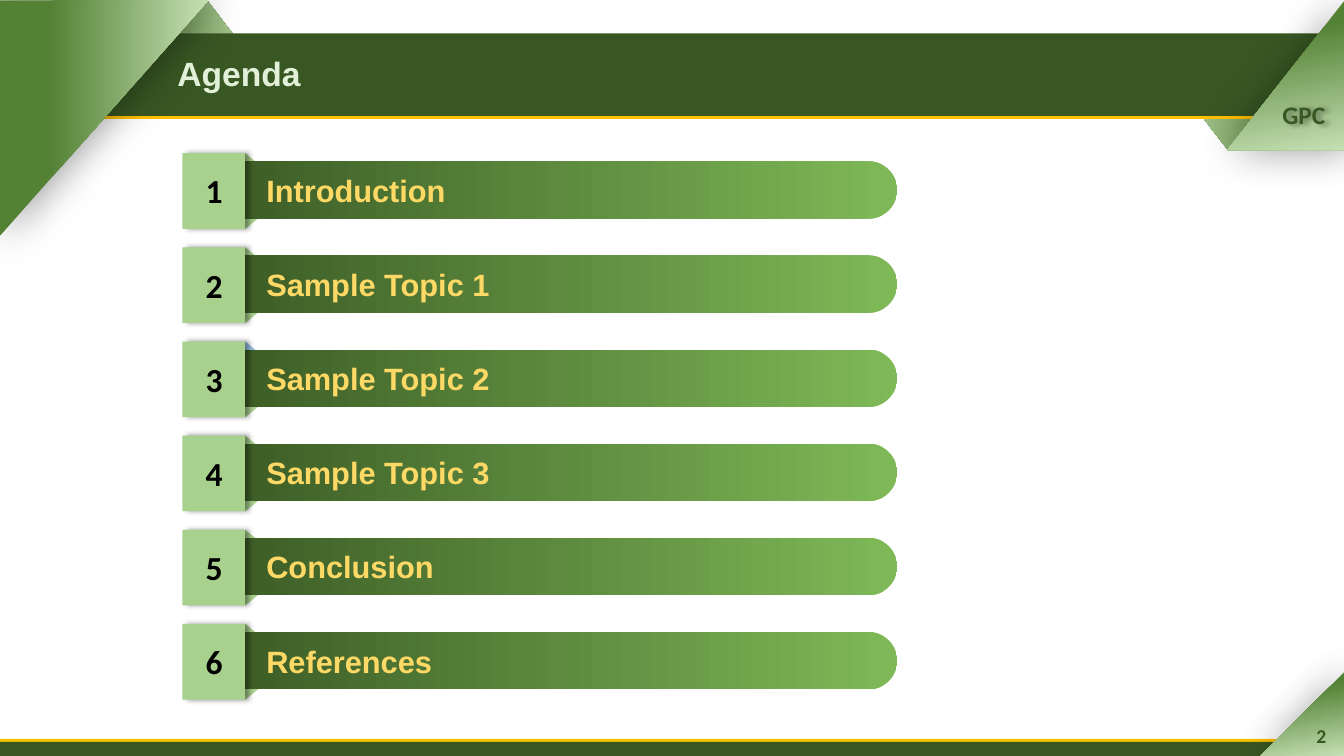
"""Build the Agenda slide with a green ribbon frame and six numbered topics."""
from lxml import etree
from pptx import Presentation
from pptx.dml.color import RGBColor
from pptx.enum.shapes import MSO_SHAPE
from pptx.enum.text import MSO_ANCHOR, MSO_AUTO_SIZE, PP_ALIGN
from pptx.oxml.ns import qn
from pptx.util import Inches, Pt

RECTANGLE = MSO_SHAPE.RECTANGLE
TRIANGLE = MSO_SHAPE.ISOSCELES_TRIANGLE
ROUNDED = MSO_SHAPE.ROUNDED_RECTANGLE
LEFT, CENTER = PP_ALIGN.LEFT, PP_ALIGN.CENTER
MIDDLE = MSO_ANCHOR.MIDDLE
NO_FIT = MSO_AUTO_SIZE.NONE

COLORS = {
    "dark": "385723", "green": "548235", "pale": "C5E0B4", "gold": "FFC000",
    "bar": "7FB957", "tile": "A9D18E", "blue": "9DC3E6", "topic": "FFD966",
    "title": "E2F0D9", "black": "000000",
}

TITLE = "Agenda"
BADGE = "GPC"
PAGE_NUMBER = "2"
TOPICS = ["Introduction", "Sample Topic 1", "Sample Topic 2",
          "Sample Topic 3", "Conclusion", "References"]
UPPER_FOLDS = {"Sample Topic 2": "blue"}

FOLD = {"fill": ("green", "pale", 0, 180), "flip": True}
CORNER = {"fill": ("green", "pale", 0.24, 170), "rotation": 270,
          "adjust": 0, "shadow": (30, 0)}
FRAME = [
    (RECTANGLE, (0, 7.33, 13, 0.14), {"fill": "gold"}),
    (RECTANGLE, (0, 7.36, 13.33, 0.14), {"fill": "dark"}),
    (TRIANGLE, (11.37, 0.44, 1.62, 1.05), {**FOLD, "adjust": 0.5}),
    (RECTANGLE, (0.32, 0.36, 12.85, 0.82), {"fill": "gold"}),
    (TRIANGLE, (1.21, 0, 1.62, 1.02), {**FOLD, "adjust": 0.48, "rotation": 180}),
    (RECTANGLE, (0.32, 0.33, 12.88, 0.82), {"fill": "dark"}),
    (TRIANGLE, (-0.14, 0.14, 2.34, 2.07),
     {**CORNER, "fill": ("green", "pale", 0.24, 270), "rotation": 90}),
    (TRIANGLE, (12.01, 0.16, 1.49, 1.17), CORNER),
    (TRIANGLE, (12.5, 6.67, 0.83, 0.83), CORNER),
]

TITLE_FONT = {"size": Pt(24), "name": "Arial", "bold": True}
TOPIC_FONT = {"size": Pt(22), "name": "Arial", "bold": True}
NUMBER_FONT = {"size": Pt(24), "name": "Calibri", "bold": True}
BADGE_FONT = {"size": Pt(18), "name": "Calibri", "bold": True}
PAGE_FONT = {"size": Pt(14), "name": "Calibri", "bold": True}

FIRST_TOP, LAST_TOP = 1.52, 6.19
TILE_LEFT, TILE_WIDTH, TILE_HEIGHT = 1.81, 0.62, 0.75
FOLD_LEFT, FOLD_WIDTH, FOLD_HEIGHT = 2.1, 0.67, 0.28
BAR_LEFT, BAR_WIDTH, BAR_HEIGHT = 1.86, 7.04, 0.57
TOPIC_INDENT = 0.6


def rgb(name):
    """Return the named colour."""
    return RGBColor.from_string(COLORS[name])


def add_shadow(shape, blur, direction):
    """Give a shape a soft black shadow three points away."""
    effects = shape._element.spPr.find(qn("a:effectLst"))
    shadow = etree.SubElement(effects, qn("a:outerShdw"), {
        "blurRad": str(Pt(blur)), "dist": str(Pt(3)),
        "dir": str(direction * 60000), "rotWithShape": "0"})
    color = etree.SubElement(shadow, qn("a:srgbClr"), val=COLORS["black"])
    etree.SubElement(color, qn("a:alpha"), val="40000")


def paint(shape, fill):
    """Fill with one colour, or with (start, end, start position, angle)."""
    if isinstance(fill, str):
        shape.fill.solid()
        shape.fill.fore_color.rgb = rgb(fill)
        return
    start, end, position, angle = fill
    shape.fill.gradient()
    shape.fill.gradient_angle = 360 - angle
    for stop, color, place in zip(shape.fill.gradient_stops, (start, end), (position, 1)):
        stop.color.rgb = rgb(color)
        stop.position = place


def add_block(shapes, kind, box, fill, rotation=0, adjust=None, flip=False, shadow=None):
    """Add a borderless preset shape."""
    shape = shapes.add_shape(kind, *map(Inches, box))
    shape.shadow.inherit = False
    shape.line.fill.background()
    shape.rotation = rotation
    paint(shape, fill)
    if adjust is not None:
        shape.adjustments[0] = adjust
    if flip:
        shape._element.spPr.xfrm.set("flipV", "1")
    if shadow:
        add_shadow(shape, *shadow)
    return shape


def write(shape, text, font, color, alignment=LEFT, wrap=False):
    """Put one formatted line of text into a shape."""
    frame = shape.text_frame
    frame.text = text
    settings = {"word_wrap": wrap, "auto_size": NO_FIT, "vertical_anchor": MIDDLE}
    for key, value in settings.items():
        setattr(frame, key, value)
    paragraph = frame.paragraphs[0]
    paragraph.alignment = alignment
    run_font = paragraph.runs[0].font
    for key, value in font.items():
        setattr(run_font, key, value)
    run_font.color.rgb = rgb(color)


def add_label(shapes, box, text, font, color, **layout):
    """Add a text box."""
    label = shapes.add_textbox(*map(Inches, box))
    write(label, text, font, color, **layout)
    return label


def add_topic(slide, number, topic, top):
    """Add one numbered agenda bar as a group."""
    shapes = slide.shapes.add_group_shape().shapes
    lower_top = top + TILE_HEIGHT - FOLD_HEIGHT
    add_block(shapes, TRIANGLE, (FOLD_LEFT, lower_top, FOLD_WIDTH, FOLD_HEIGHT),
              "tile", rotation=180)
    add_block(shapes, TRIANGLE, (FOLD_LEFT, top, FOLD_WIDTH, FOLD_HEIGHT),
              UPPER_FOLDS.get(topic, "tile"))
    bar = add_block(shapes, ROUNDED, (BAR_LEFT, top + 0.08, BAR_WIDTH, BAR_HEIGHT),
                    ("bar", "dark", 0, 180), adjust=0.5)
    write(bar, topic, TOPIC_FONT, "topic", wrap=True)
    properties = bar.text_frame.paragraphs[0]._p.get_or_add_pPr()
    properties.set("marL", str(Inches(TOPIC_INDENT)))
    add_block(shapes, RECTANGLE, (TILE_LEFT, top, TILE_WIDTH, TILE_HEIGHT),
              "tile", shadow=(4, 359))
    add_label(shapes, (1.94, top + 0.12, 0.37, 0.5), str(number), NUMBER_FONT, "black")


def main():
    """Build and save the slide."""
    presentation = Presentation()
    presentation.slide_width = Inches(13.33)
    presentation.slide_height = Inches(7.5)
    slide = presentation.slides.add_slide(presentation.slide_layouts[5])
    for kind, box, style in FRAME:
        add_block(slide.shapes, kind, box, **style)
    badge = add_label(slide.shapes, (12.62, 0.94, 0.63, 0.4), BADGE, BADGE_FONT, "dark")
    badge.shadow.inherit = False
    add_shadow(badge, 4, 0)

    pitch = (LAST_TOP - FIRST_TOP) / (len(TOPICS) - 1)
    for index, topic in enumerate(TOPICS):
        add_topic(slide, index + 1, topic, FIRST_TOP + index * pitch)

    title = slide.shapes.title
    title_box = {"left": 1.66, "top": 0.47, "width": 1.44, "height": 0.5}
    for key, value in title_box.items():
        setattr(title, key, Inches(value))
    write(title, TITLE, TITLE_FONT, "title")
    slide.shapes._spTree.append(title._element)
    add_label(slide.shapes, (12.87, 7.1, 0.47, 0.4), PAGE_NUMBER, PAGE_FONT, "dark",
              alignment=CENTER, wrap=True)
    presentation.save("out.pptx")


if __name__ == "__main__":
    main()
